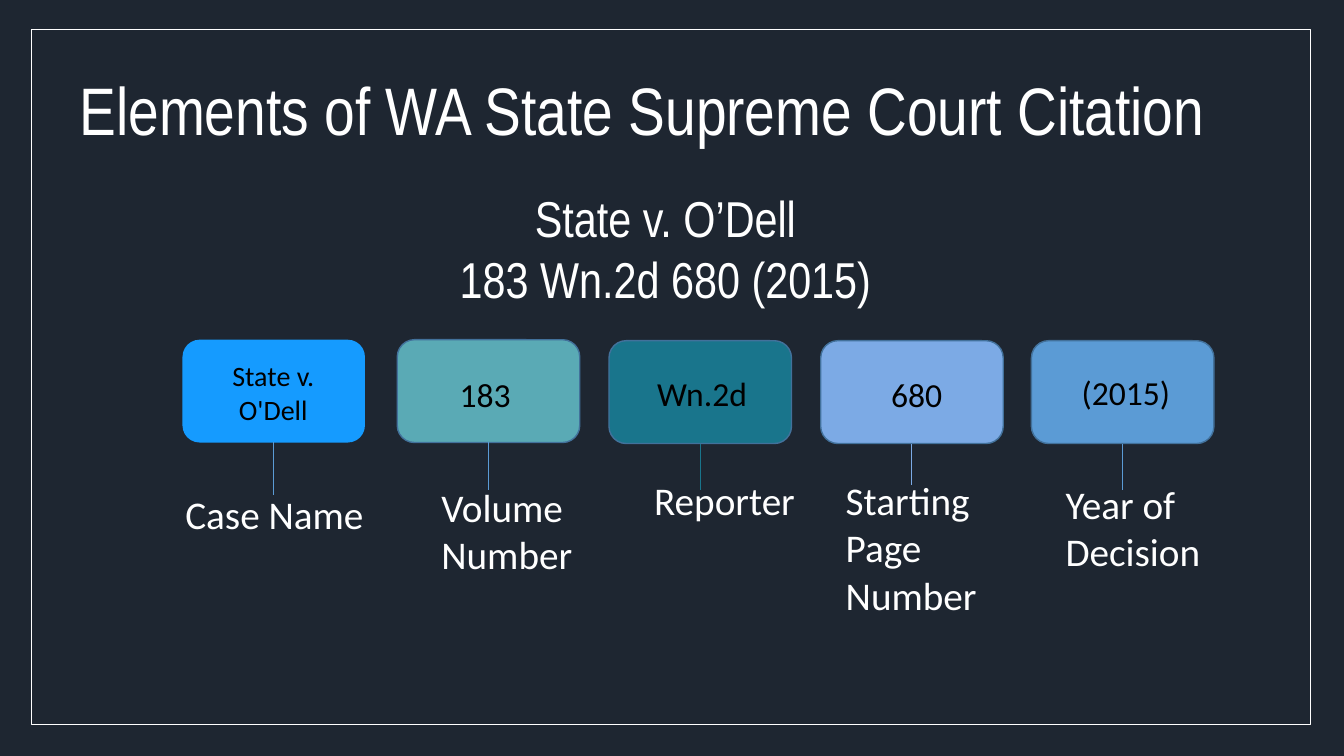
from pptx import Presentation
from pptx.dml.color import RGBColor
from pptx.enum.shapes import MSO_CONNECTOR, MSO_SHAPE
from pptx.enum.text import PP_ALIGN
from pptx.oxml.ns import qn
from pptx.util import Inches, Pt
from lxml.etree import SubElement

WHITE, BLACK, NAVY = "FFFFFF", "000000", "1E2631"
EDGE, BLUE = "42719B", "5B9BD5"
HEADING_FONT, BODY_FONT = "Arial Narrow", "Calibri"
CARD_WIDTH, CARD_HEIGHT = 1.81, 1.02
BOTTOM = 2

# Each citation part: card (left, top, fill, edge), value (text, left, top, height,
# size, align), label (text, left, top, height), stem (end, colour)
PARTS = [
    ((1.81, 3.37, "159BFF", None),
     ("State v. O'Dell", 1.85, 3.51, 0.77, 20, PP_ALIGN.CENTER),
     ("Case Name", 1.74, 4.82, 0.57), (4.91, BLUE)),
    ((3.94, 3.37, "5AAAB5", EDGE),
     ("183", 4.46, 3.66, 0.5, 24, PP_ALIGN.LEFT),
     ("Volume\nNumber", 4.28, 4.75, 1.04), (4.86, BLUE)),
    ((6.04, 3.38, "19758C", EDGE),
     ("Wn.2d", 6.42, 3.65, 0.5, 24, PP_ALIGN.LEFT),
     ("Reporter", 6.39, 4.68, 0.57), (4.86, "19758C")),
    ((8.14, 3.38, "7CAAE5", EDGE),
     ("680", 8.74, 3.66, 0.5, 24, PP_ALIGN.LEFT),
     ("Starting Page Number", 8.29, 4.68, 1.51), (4.81, "7CAAE5")),
    ((10.23, 3.38, BLUE, EDGE),
     ("(2015)", 10.63, 3.64, 0.5, 24, PP_ALIGN.LEFT),
     ("Year of Decision", 10.47, 4.72, 1.04), (4.86, BLUE)),
]


def color(hex_code):
    return RGBColor.from_string(hex_code)


def add_text(slide, text, left, top, width, height, *, size, font=BODY_FONT,
             fill=WHITE, align=PP_ALIGN.LEFT):
    """Add a wrapping text box; each line of text becomes a paragraph."""
    box = slide.shapes.add_textbox(Inches(left), Inches(top), Inches(width), Inches(height))
    frame = box.text_frame
    frame.word_wrap = True
    frame.text = text
    for para in frame.paragraphs:
        para.alignment = align
        for span in para.runs:
            span.font.name = font
            span.font.size = Pt(size)
            span.font.color.rgb = color(fill)


def add_box(slide, kind, left, top, width, height, *, fill=None, edge=None):
    box = slide.shapes.add_shape(kind, Inches(left), Inches(top), Inches(width), Inches(height))
    box.shadow.inherit = False
    if fill:
        box.fill.solid()
        box.fill.fore_color.rgb = color(fill)
    else:
        box.fill.background()
    if edge:
        box.line.color.rgb = color(edge)
        box.line.width = Pt(1)
    else:
        box.line.fill.background()
    return box


def add_stem(slide, card, end, stroke):
    """Draw a line from the middle of the card's bottom side down to end."""
    center = card.left + card.width // 2
    stem = slide.shapes.add_connector(
        MSO_CONNECTOR.STRAIGHT, center, card.top + card.height, center, Inches(end))
    stem.begin_connect(card, BOTTOM)
    stem.line.color.rgb = color(stroke)
    stem.line.width = Pt(0.75)
    SubElement(stem.line._get_or_add_ln().getparent(), qn("a:effectLst"))


def add_part(slide, card_data, value_data, label_data, stem_data):
    left, top, fill, edge = card_data
    card = add_box(slide, MSO_SHAPE.ROUNDED_RECTANGLE, left, top, CARD_WIDTH, CARD_HEIGHT,
                   fill=fill, edge=edge)
    value, left, top, height, size, align = value_data
    add_text(slide, value, left, top, 1.72, height, size=size, fill=BLACK, align=align)
    add_stem(slide, card, *stem_data)
    label, left, top, height = label_data
    add_text(slide, label, left, top, 2.04, height, size=28)


def main():
    deck = Presentation()
    deck.slide_width, deck.slide_height = Inches(13.33), Inches(7.5)
    slide = deck.slides.add_slide(deck.slide_layouts[6])
    slide.background.fill.solid()
    slide.background.fill.fore_color.rgb = color(NAVY)

    add_box(slide, MSO_SHAPE.RECTANGLE, 0.31, 0.29, 12.69, 6.9, edge=WHITE)
    add_text(slide, "Elements of WA State Supreme Court Citation",
             0.69, 0.63, 12.06, 0.91, size=48, font=HEADING_FONT)
    add_text(slide, "State v. O’Dell\n183 Wn.2d 680 (2015)",
             2.97, 1.81, 7.26, 1.31, size=36, font=HEADING_FONT, align=PP_ALIGN.CENTER)
    for part in PARTS:
        add_part(slide, *part)
    deck.save("out.pptx")


if __name__ == "__main__":
    main()
